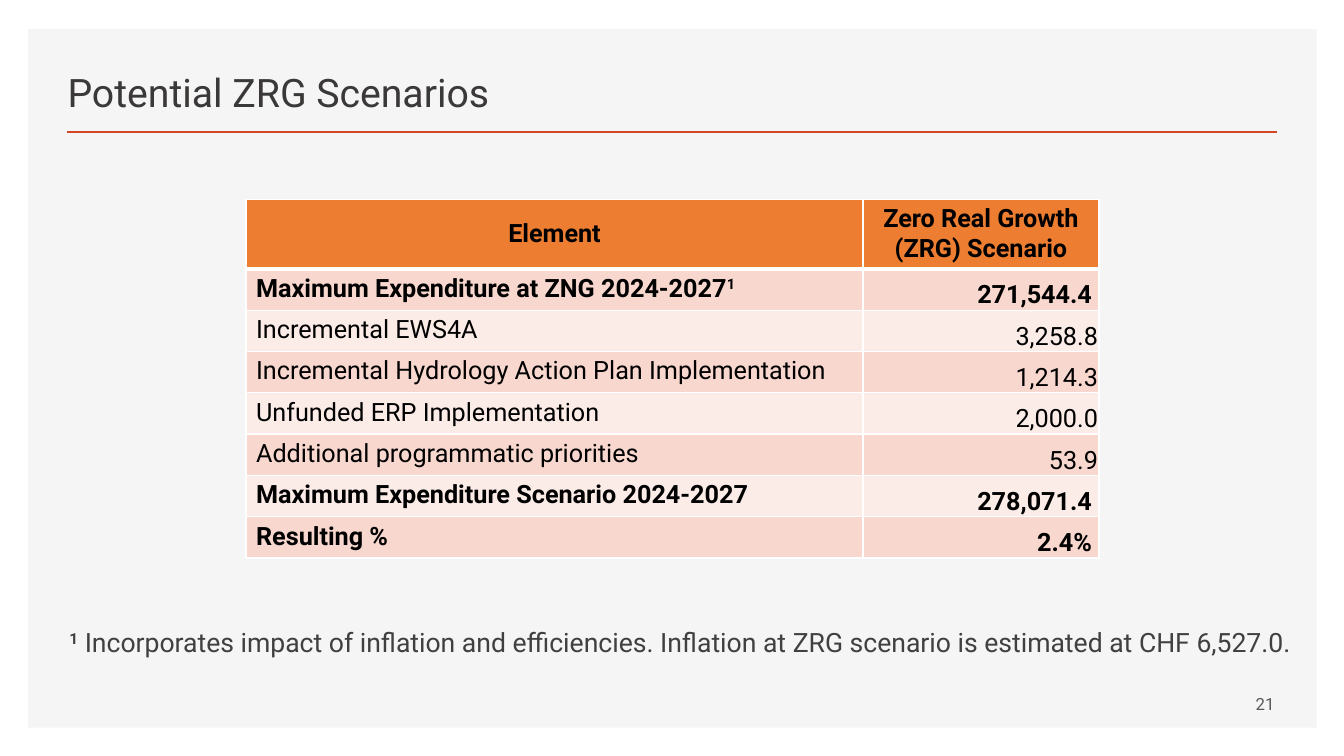
from dataclasses import dataclass

from lxml import etree
from pptx import Presentation
from pptx.dml.color import RGBColor
from pptx.enum.shapes import MSO_CONNECTOR, MSO_SHAPE
from pptx.enum.text import MSO_ANCHOR, PP_ALIGN
from pptx.oxml.ns import qn
from pptx.util import Inches, Pt

LEFT, CENTER, RIGHT = PP_ALIGN.LEFT, PP_ALIGN.CENTER, PP_ALIGN.RIGHT
TOP, MIDDLE, BOTTOM = MSO_ANCHOR.TOP, MSO_ANCHOR.MIDDLE, MSO_ANCHOR.BOTTOM
RECTANGLE, STRAIGHT = MSO_SHAPE.RECTANGLE, MSO_CONNECTOR.STRAIGHT
TITLE_ONLY = 5


@dataclass(frozen=True)
class Theme:
    font: str = "Roboto"
    panel: str = "F5F5F5"
    rule: str = "D24726"
    title: str = "3B3838"
    note: str = "404040"
    number: str = "595959"
    cell_text: str = "000000"
    header: str = "ED7D31"
    bands: tuple = ("F8D7CE", "FCECE8")
    border: str = "FFFFFF"
    title_size: int = 28
    note_size: int = 19
    table_size: int = 18
    number_size: int = 12


class SlideBuilder:
    def __init__(self, slide, theme):
        self.slide = slide
        self.theme = theme

    def fill_text(self, frame, pieces, size, color, align=LEFT, anchor=TOP):
        """Fill a frame with (text, bold, superscript) pieces."""
        frame.word_wrap = True
        frame.vertical_anchor = anchor
        paragraph = frame.paragraphs[0]
        paragraph.alignment = align
        for text, bold, superscript in pieces:
            run = paragraph.add_run()
            run.text = text
            run.font.name = self.theme.font
            run.font.size = Pt(size)
            run.font.bold = bold
            run.font.color.rgb = RGBColor.from_string(color)
            if superscript:
                run.font._element.set("baseline", "30000")
        return paragraph

    def panel(self, left, top, width, height):
        panel = self.slide.shapes.add_shape(
            RECTANGLE, Inches(left), Inches(top), Inches(width), Inches(height))
        panel.shadow.inherit = False
        panel.fill.solid()
        panel.fill.fore_color.rgb = RGBColor.from_string(self.theme.panel)
        panel.line.fill.background()
        # Send behind the title placeholder
        self.slide.shapes._spTree.insert(2, panel._element)

    def rule(self, left, right, y):
        rule = self.slide.shapes.add_connector(
            STRAIGHT, Inches(left), Inches(y), Inches(right), Inches(y))
        rule.line.color.rgb = RGBColor.from_string(self.theme.rule)
        rule.line.width = Pt(2)
        etree.SubElement(rule._element.spPr, qn("a:effectLst"))

    def title(self, text, left, top, width, height):
        title = self.slide.shapes.title
        title.left, title.top = Inches(left), Inches(top)
        title.width, title.height = Inches(width), Inches(height)
        self.fill_text(title.text_frame, [(text, False, False)],
                       self.theme.title_size, self.theme.title, LEFT, BOTTOM)

    def text(self, pieces, left, top, width, height, size, color, **layout):
        box = self.slide.shapes.add_textbox(
            Inches(left), Inches(top), Inches(width), Inches(height))
        return self.fill_text(box.text_frame, pieces, size, color, **layout)

    def cell(self, cell, pieces, fill, align, anchor, top_border=1, bottom_border=1):
        cell.fill.solid()
        cell.fill.fore_color.rgb = RGBColor.from_string(fill)
        self.fill_text(cell.text_frame, pieces, self.theme.table_size,
                       self.theme.cell_text, align)
        cell.vertical_anchor = anchor
        properties = cell._tc.get_or_add_tcPr()
        borders = (("L", 1), ("R", 1), ("T", top_border), ("B", bottom_border))
        for position, (side, points) in enumerate(borders):
            border = etree.Element(qn(f"a:ln{side}"), w=str(Pt(points)))
            solid = etree.SubElement(border, qn("a:solidFill"))
            etree.SubElement(solid, qn("a:srgbClr"), val=self.theme.border)
            properties.insert(position, border)

    def table(self, headings, entries, left, top, widths, header_height, row_height):
        height = header_height + row_height * len(entries)
        table = self.slide.shapes.add_table(
            len(entries) + 1, len(widths), Inches(left), Inches(top),
            Inches(sum(widths)), Inches(height)).table
        for column, width in zip(table.columns, widths):
            column.width = Inches(width)
        for row in table.rows:
            row.height = Inches(row_height)
        table.rows[0].height = Inches(header_height)

        for column, heading in enumerate(headings):
            self.cell(table.cell(0, column), [(heading, True, False)],
                      self.theme.header, CENTER, MIDDLE, bottom_border=3)

        for row, (element, mark, amount, bold) in enumerate(entries, start=1):
            fill = self.theme.bands[(row - 1) % 2]
            top_border = 3 if row == 1 else 1
            label = [(element, bold, False)]
            if mark:
                label.append((mark, bold, True))
            self.cell(table.cell(row, 0), label, fill, LEFT, TOP, top_border)
            amount_cell = table.cell(row, 1)
            self.cell(amount_cell, [(amount, bold, False)], fill, RIGHT, BOTTOM, top_border)
            amount_cell.margin_left = amount_cell.margin_top = Inches(0.01)
            amount_cell.margin_right = Inches(0.07 if bold else 0.01)
            amount_cell.margin_bottom = 0


HEADINGS = ("Element", "Zero Real Growth (ZRG) Scenario")
# Element, footnote mark, amount, bold
ENTRIES = (
    ("Maximum Expenditure at ZNG 2024-2027", "1", "271,544.4", True),
    ("Incremental EWS4A", "", "3,258.8", False),
    ("Incremental Hydrology Action Plan Implementation", "", "1,214.3", False),
    ("Unfunded ERP Implementation", "", "2,000.0", False),
    ("Additional programmatic priorities", "", "53.9", False),
    ("Maximum Expenditure Scenario 2024-2027", "", "278,071.4", True),
    ("Resulting %", "", "2.4%", True),
)
FOOTNOTE = (
    ("1", True, True),
    (" Incorporates impact of inflation and efficiencies. "
     "Inflation at ZRG scenario is estimated at CHF 6,527.0.", False, False),
)


def main():
    theme = Theme()
    presentation = Presentation()
    presentation.slide_width, presentation.slide_height = Inches(13.33), Inches(7.5)
    slide = presentation.slides.add_slide(presentation.slide_layouts[TITLE_ONLY])
    builder = SlideBuilder(slide, theme)

    # Background panel and heading
    builder.panel(0.28, 0.29, 12.78, 6.93)
    builder.title("Potential ZRG Scenarios", 0.57, 0.49, 9.37, 0.7)
    builder.rule(0.66, 12.67, 1.31)

    # Scenario table
    builder.table(HEADINGS, ENTRIES, left=2.44, top=1.98, widths=(6.12, 2.34),
                  header_height=0.68, row_height=0.41)

    # Slide number and footnote
    builder.text([("21", False, False)], 9.16, 6.78, 3.58, 0.4,
                 theme.number_size, theme.number, align=RIGHT, anchor=MIDDLE)
    footnote = builder.text(FOOTNOTE, 0.59, 6.16, 12.4, 0.85,
                            theme.note_size, theme.note)
    footnote.space_before = Pt(10)

    presentation.save("out.pptx")


if __name__ == "__main__":
    main()
